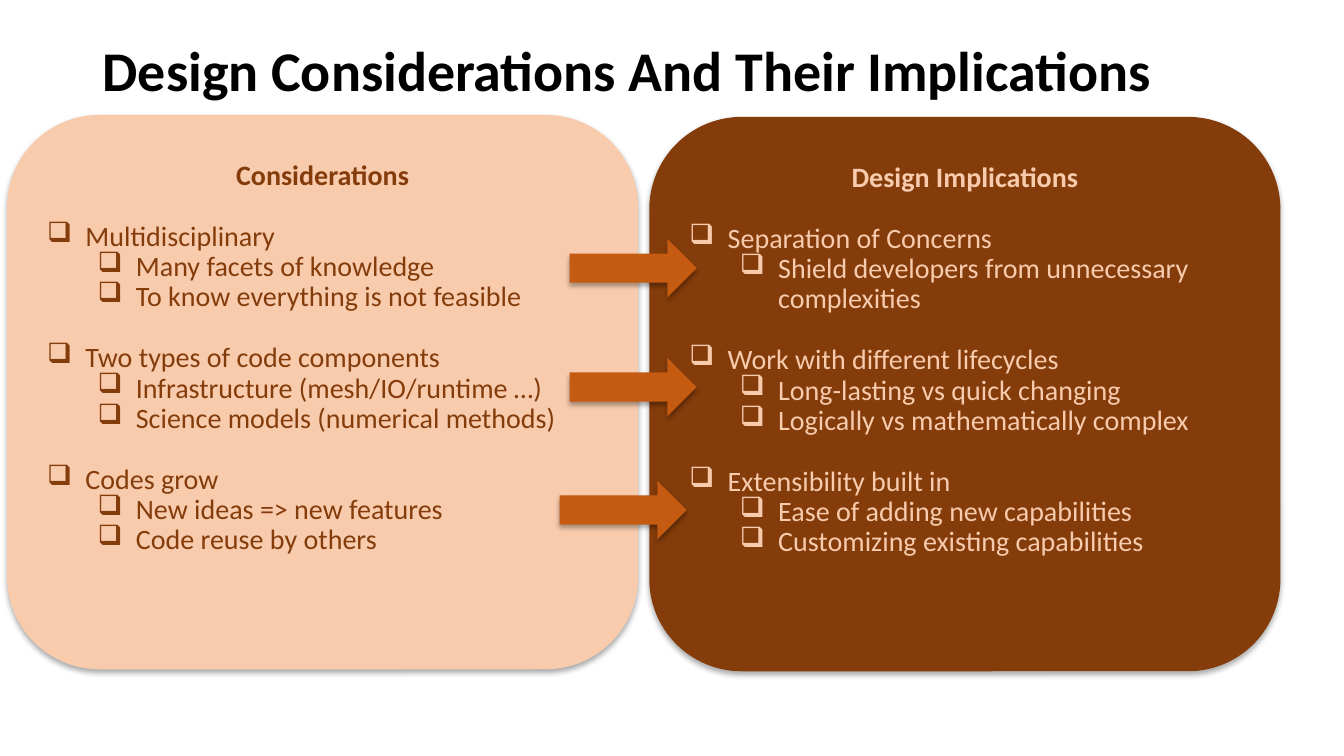
from lxml import etree
from pptx import Presentation
from pptx.dml.color import RGBColor
from pptx.enum.shapes import MSO_SHAPE
from pptx.enum.text import MSO_ANCHOR, PP_ALIGN
from pptx.oxml.ns import qn
from pptx.util import Inches, Pt

ROUND, ARROW = MSO_SHAPE.ROUNDED_RECTANGLE, MSO_SHAPE.RIGHT_ARROW
TOP, MIDDLE = MSO_ANCHOR.TOP, MSO_ANCHOR.MIDDLE
LEFT, CENTER = PP_ALIGN.LEFT, PP_ALIGN.CENTER

COLORS = {"title": "000000", "peach": "F8CBAD", "brown": "843C0B",
          "arrow": "C55A11", "shadow": "000000"}
TITLE = "Design Considerations And Their Implications"
PANELS = [
    {"heading": "Considerations", "at": (0.07, 1.14), "fill": "peach", "ink": "brown",
     "groups": [
         ("Multidisciplinary",
          ["Many facets of knowledge", "To know everything is not feasible"]),
         ("Two types of code components",
          ["Infrastructure (mesh/IO/runtime …)", "Science models (numerical methods)"]),
         ("Codes grow",
          ["New ideas => new features", "Code reuse by others"]),
     ]},
    {"heading": "Design Implications", "at": (6.44, 1.16), "fill": "brown", "ink": "peach",
     "groups": [
         ("Separation of Concerns",
          ["Shield developers from unnecessary complexities"]),
         ("Work with different lifecycles",
          ["Long-lasting vs quick changing", "Logically vs mathematically complex"]),
         ("Extensibility built in",
          ["Ease of adding new capabilities", "Customizing existing capabilities"]),
     ]},
]
ARROWS = [(5.65, 2.37), (5.65, 3.55), (5.55, 4.77)]
PANEL_SIZE, ARROW_SIZE = (6.26, 5.5), (1.26, 0.58)
INDENTS, HANG = (0.38, 0.88), 0.38
GROUP_GAP = 22  # one text line, in points


def rgb(name):
    return RGBColor.from_string(COLORS[name])


def set_frame(tf, anchor, insets):
    tf.word_wrap = True
    tf.vertical_anchor = anchor
    for side, inset in zip(("left", "top", "right", "bottom"), insets):
        setattr(tf, f"margin_{side}", Inches(inset))


def write(p, text, color, size=20, bold=False, align=LEFT, level=None, gap=0):
    """Fill a paragraph; a level makes it a bulleted item."""
    if level is not None:
        pPr = p._p.get_or_add_pPr()
        pPr.set("marL", str(Inches(INDENTS[level])))
        pPr.set("indent", str(-Inches(HANG)))
        etree.SubElement(pPr, qn("a:buChar"), char="❑")
        p.level = level
    p.alignment = align
    p.line_spacing = 0.9
    if gap:
        p.space_before = Pt(gap)
    r = p.add_run()
    r.text = text
    style = {"name": "Calibri", "size": Pt(size), "bold": bold}
    for key, value in style.items():
        setattr(r.font, key, value)
    r.font.color.rgb = rgb(color)


def add_block(slide, kind, at, size, fill):
    """Add a borderless filled shape with a soft shadow below it."""
    s = slide.shapes.add_shape(kind, *map(Inches, at + size))
    s.fill.solid()
    s.fill.fore_color.rgb = rgb(fill)
    s.line.fill.background()
    s.shadow.inherit = False
    effects = s._element.spPr.find(qn("a:effectLst"))
    shadow = etree.SubElement(effects, qn("a:outerShdw"), blurRad=str(Pt(3.5)),
                              dist=str(Pt(2.2)), dir="5400000", rotWithShape="0")
    color = etree.SubElement(shadow, qn("a:srgbClr"), val=COLORS["shadow"])
    etree.SubElement(color, qn("a:alpha"), val="32000")
    return s


def add_panel(slide, panel):
    s = add_block(slide, ROUND, panel["at"], PANEL_SIZE, panel["fill"])
    tf, ink = s.text_frame, panel["ink"]
    set_frame(tf, TOP, (0.13, 0.19, 0.13, 0.07))
    write(tf.paragraphs[0], panel["heading"], ink, bold=True, align=CENTER)
    for topic, details in panel["groups"]:
        write(tf.add_paragraph(), topic, ink, level=0, gap=GROUP_GAP)
        for detail in details:
            write(tf.add_paragraph(), detail, ink, level=1)


def main():
    prs = Presentation()
    prs.slide_width, prs.slide_height = Inches(13.33), Inches(7.5)
    slide = prs.slides.add_slide(prs.slide_layouts[6])
    title = slide.shapes.add_textbox(*map(Inches, (0.92, 0, 11.5, 1.45)))
    set_frame(title.text_frame, MIDDLE, (0.1, 0.05, 0.1, 0.05))
    write(title.text_frame.paragraphs[0], TITLE, "title", size=40, bold=True)
    for panel in PANELS:
        add_panel(slide, panel)
    for at in ARROWS:
        add_block(slide, ARROW, at, ARROW_SIZE, "arrow")
    prs.save("out.pptx")


if __name__ == "__main__":
    main()
